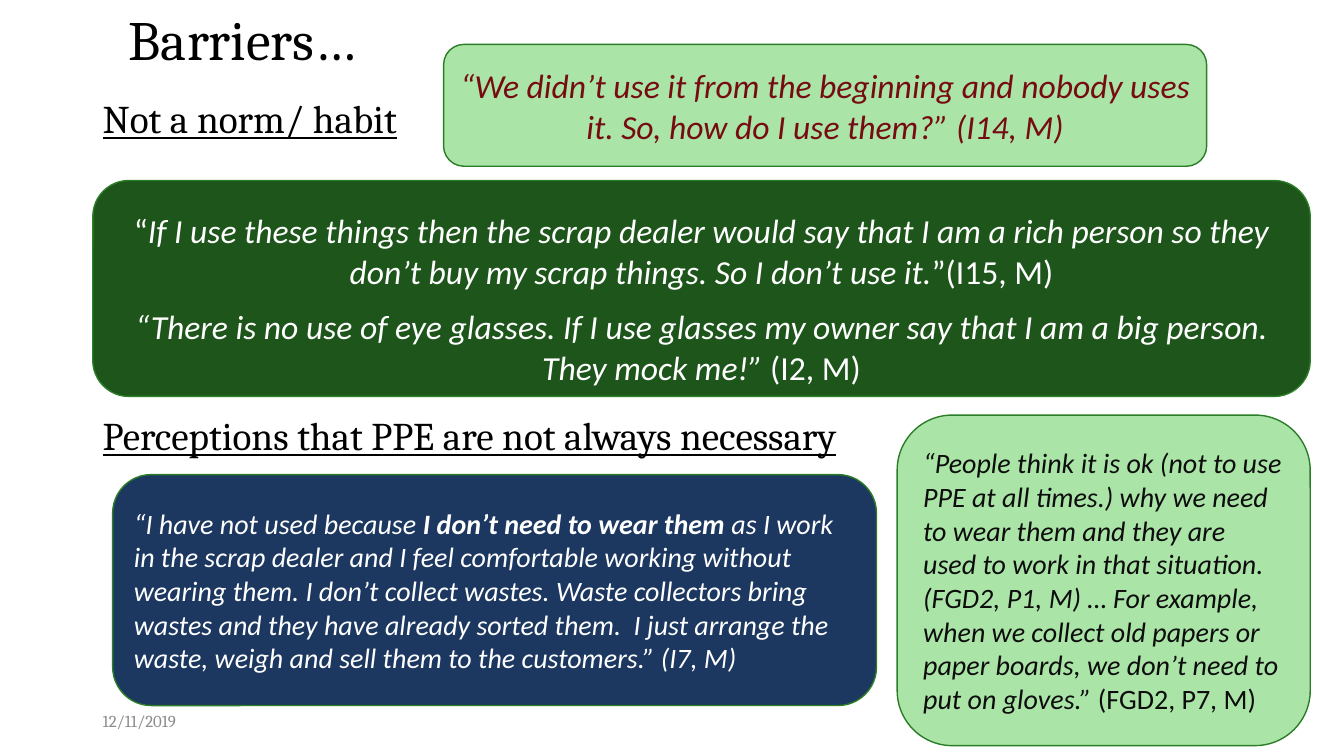
from dataclasses import dataclass

from pptx import Presentation
from pptx.dml.color import RGBColor
from pptx.enum.shapes import MSO_SHAPE
from pptx.enum.text import MSO_ANCHOR, PP_ALIGN
from pptx.util import Cm, Pt

ROUNDED = MSO_SHAPE.ROUNDED_RECTANGLE
TOP, MIDDLE = MSO_ANCHOR.TOP, MSO_ANCHOR.MIDDLE
LEFT, CENTER = PP_ALIGN.LEFT, PP_ALIGN.CENTER
LIGHT_GREEN, DARK_GREEN, NAVY, EDGE = "AAE4A7", "1D551B", "1C3860", "2B7E27"
BLACK, WHITE, GREY, MAROON, INK = "000000", "FFFFFF", "8C8C8C", "760C11", "0D0D0D"


@dataclass
class Run:
    text: str
    italic: bool = False
    bold: bool = False


@dataclass
class Label:
    """Plain text; box holds left, top, width and height in cm."""
    text: str
    box: tuple[float, float, float, float]
    size: float
    color: str = BLACK
    underline: bool = False
    anchor: MSO_ANCHOR = MIDDLE
    spacing: float = 0.9


@dataclass
class Quote:
    """Rounded panel of quotations; box is in cm."""
    box: tuple[float, float, float, float]
    fill: str
    color: str
    size: float
    paragraphs: list[list[Run]]
    align: PP_ALIGN = LEFT
    anchor: MSO_ANCHOR = MIDDLE
    inset_top: float = 0.13


LABELS = [
    Label("Barriers…", (3, 0.13, 29.21, 1.9), 39.6),
    Label("Not a norm/ habit", (2.34, 2.39, 8.8, 1.27), 28, underline=True, anchor=TOP),
    Label("Perceptions that PPE are not always necessary", (2.34, 10.38, 20.2, 1.27), 28,
          underline=True, anchor=TOP),
    Label("12/11/2019", (2.34, 17.65, 3.33, 1.02), 12, GREY, spacing=1.0),
]

QUOTES = [
    Quote((11.18, 1.12, 19.23, 3.07), LIGHT_GREEN, MAROON, 24, [
        [Run("“We didn’t use it from the beginning and nobody uses it. "
             "So, how do I use them?” (I14, M)", italic=True)],
    ], CENTER),
    Quote((2.34, 4.55, 30.68, 5.44), DARK_GREEN, WHITE, 24, [
        [Run("“"),
         Run("If I use these things then the scrap dealer would say that I am a rich person "
             "so they don’t buy my scrap things. So I don’t use it.", italic=True),
         Run("”(I15, M)")],
        [Run("“There is no use of eye glasses. If I use glasses my owner say that I am a big "
             "person. They mock me!”", italic=True),
         Run(" (I2, M)")],
    ], CENTER, TOP, 0.48),
    Quote((22.61, 10.46, 10.41, 8.33), LIGHT_GREEN, INK, 20, [
        [Run("“People think it is ok (not to use PPE at all times.) why we need to wear them "
             "and they are used to work in that situation. (FGD2, P1, M) … For example, when "
             "we collect old papers or paper boards, we don’t need to put on gloves.”",
             italic=True),
         Run(" (FGD2, P7, M)")],
    ]),
    Quote((2.84, 11.96, 19.25, 5.82), NAVY, WHITE, 20, [
        [Run("“I have not used because ", italic=True),
         Run("I don’t need to wear them ", italic=True, bold=True),
         Run("as I work in the scrap dealer and I feel comfortable working without wearing "
             "them. I don’t collect wastes. Waste collectors bring wastes and they have already "
             "sorted them.  I just arrange the waste, weigh and sell them to the customers.” "
             "(I7, M)", italic=True)],
    ]),
]


def rgb(value: str) -> RGBColor:
    return RGBColor.from_string(value)


def add_run(p, run: Run, font: str, size: float, color: str):
    r = p.add_run()
    r.text = run.text
    r.font.name = font
    r.font.size = Pt(size)
    r.font.color.rgb = rgb(color)
    r.font.italic = run.italic
    r.font.bold = run.bold
    return r


def add_label(s, label: Label) -> None:
    tf = s.shapes.add_textbox(*map(Cm, label.box)).text_frame
    tf.word_wrap = True
    tf.vertical_anchor = label.anchor
    p = tf.paragraphs[0]
    p.line_spacing = label.spacing
    r = add_run(p, Run(label.text), "Cambria", label.size, label.color)
    r.font.underline = label.underline


def add_quote(s, quote: Quote) -> None:
    sp = s.shapes.add_shape(ROUNDED, *map(Cm, quote.box))
    sp.shadow.inherit = False
    sp.fill.solid()
    sp.fill.fore_color.rgb = rgb(quote.fill)
    sp.line.color.rgb = rgb(EDGE)
    sp.line.width = Pt(1)
    tf = sp.text_frame
    tf.word_wrap = True
    tf.vertical_anchor = quote.anchor
    tf.margin_top = Cm(quote.inset_top)
    for i, runs in enumerate(quote.paragraphs):
        p = tf.add_paragraph() if i else tf.paragraphs[0]
        p.alignment = quote.align
        if i:
            p.space_before = Pt(11)
        for run in runs:
            add_run(p, run, "Calibri", quote.size, quote.color)


def main() -> None:
    prs = Presentation()
    prs.slide_width, prs.slide_height = Cm(33.87), Cm(19.05)
    s = prs.slides.add_slide(prs.slide_layouts[6])
    # Title, section headings and date
    for label in LABELS:
        add_label(s, label)
    # Interview quotations
    for quote in QUOTES:
        add_quote(s, quote)
    prs.save("out.pptx")


if __name__ == "__main__":
    main()
